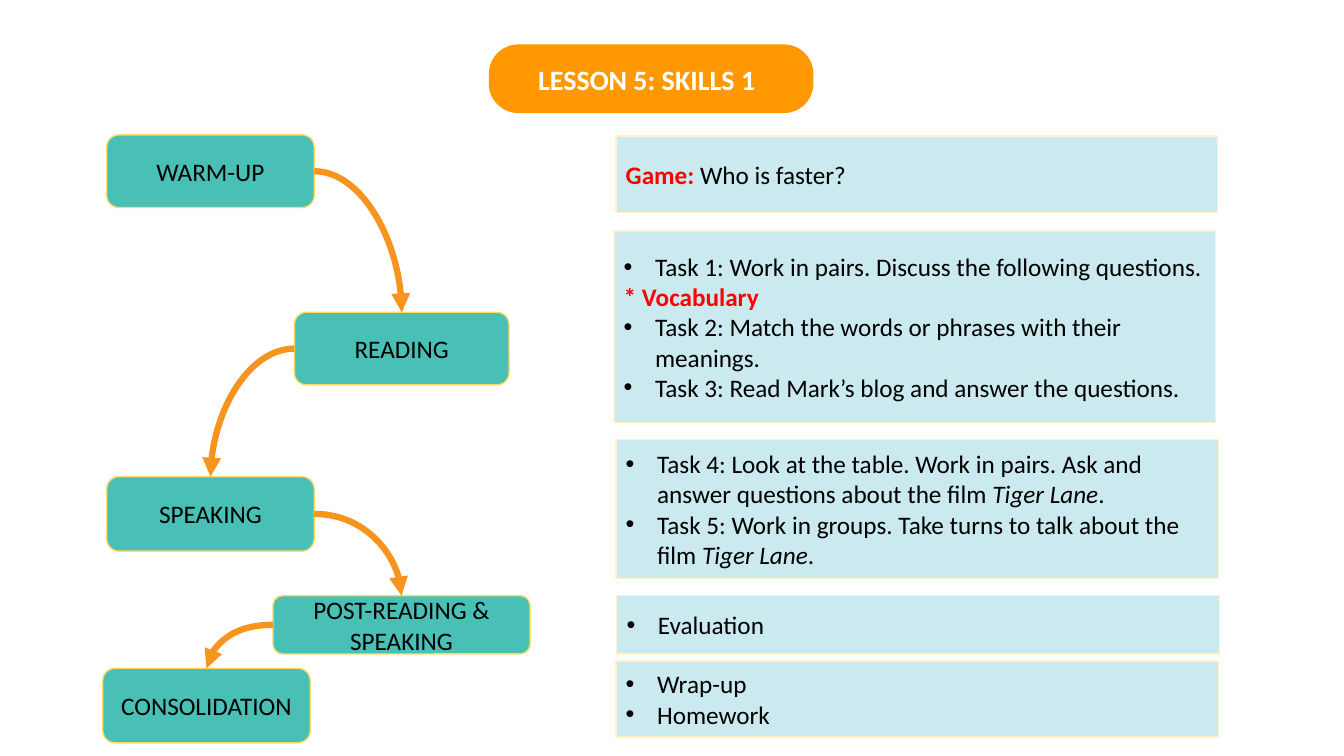
"""Build the lesson overview slide: a chain of stages beside their tasks."""
from lxml import etree
from pptx import Presentation
from pptx import util as u
from pptx.dml.color import RGBColor
from pptx.enum import shapes, text
from pptx.oxml import ns


def paint(color_format, color):
    color_format.rgb = RGBColor.from_string(color)


def add_box(kind, place, fill, line=None):
    shape = slide.shapes.add_shape(kind, *[u.Cm(length) for length in place])
    shape.shadow.inherit = False
    shape.fill.solid()
    paint(shape.fill.fore_color, fill)
    if line:
        paint(shape.line.color, line)
        shape.line.width = u.Pt(1)
    else:
        shape.line.fill.background()
    shape.text_frame.word_wrap = True
    shape.text_frame.vertical_anchor = text.MSO_ANCHOR.MIDDLE
    return shape


presentation = Presentation()
presentation.slide_width = u.Cm(33.87)
presentation.slide_height = u.Cm(19.05)
slide = presentation.slides.add_slide(presentation.slide_layouts[6])

ROUNDED = shapes.MSO_SHAPE.ROUNDED_RECTANGLE
FONT = "Calibri"
FILM = "Tiger Lane"
TOP, LEFT, RIGHT = 0, 1, 3

title_pill = add_box(ROUNDED, (12.32, 1.12, 8.18, 1.73), "FF9801")
title_pill.adjustments[0] = 0.43
title = slide.shapes.add_textbox(u.Cm(13.31), u.Cm(1.45), u.Cm(6.38), u.Cm(1.12))
title.text_frame.word_wrap = True
run = title.text_frame.paragraphs[0].add_run()
run.text = "LESSON 5: SKILLS 1"
run.font.name = FONT
run.font.size = u.Pt(20)
run.font.bold = True
paint(run.font.color, "FFFFFF")

stages = [
    ("WARM-UP", (2.69, 3.4, 5.23, 1.83)),
    ("READING", (7.42, 7.87, 5.41, 1.83)),
    ("SPEAKING", (2.69, 12.01, 5.23, 1.88)),
    ("POST-READING & SPEAKING", (6.88, 15.01, 6.48, 1.47)),
    ("CONSOLIDATION", (2.59, 16.84, 5.23, 1.88)),
]
stage_boxes = []
for name, place in stages:
    box = add_box(ROUNDED, place, "48C0B6", "FFD966")
    paragraph = box.text_frame.paragraphs[0]
    paragraph.alignment = text.PP_ALIGN.CENTER
    run = paragraph.add_run()
    run.text = name
    run.font.name = FONT
    run.font.size = u.Pt(18)
    paint(run.font.color, "000000")
    stage_boxes.append(box)

for index, (start, end) in enumerate(zip(stage_boxes, stage_boxes[1:])):
    arrow = slide.shapes.add_connector(shapes.MSO_CONNECTOR.CURVE, 0, 0, 0, 0)
    arrow.begin_connect(start, LEFT if index % 2 else RIGHT)
    arrow.end_connect(end, TOP)
    paint(arrow.line.color, "F7941E")
    arrow.line.width = u.Pt(4.5)
    properties = arrow._element.spPr
    properties.find(ns.qn("a:prstGeom")).set("prst", "curvedConnector2")
    etree.SubElement(properties.find(ns.qn("a:ln")), ns.qn("a:tailEnd"), type="triangle")
    etree.SubElement(properties, ns.qn("a:effectLst"))

tasks = [
    ((15.52, 3.43, 15.16, 1.93), [
        (False, [("Game: ", "key"), ("Who is faster?", "plain")]),
    ]),
    ((15.47, 5.82, 15.16, 4.83), [
        (True, [("Task 1: Work in pairs. Discuss the following questions.", "plain")]),
        (False, [("* Vocabulary", "key")]),
        (True, [("Task 2: Match the words or phrases with their meanings.", "plain")]),
        (True, [("Task 3: Read Mark’s blog and answer the questions.", "plain")]),
    ]),
    ((15.52, 11.07, 15.19, 3.51), [
        (True, [("Task 4: Look at the table. Work in pairs. Ask and answer "
                 "questions about the film ", "plain"),
                (FILM, "film"), (".", "plain")]),
        (True, [("Task 5: Work in groups. Take turns to talk about the film ", "plain"),
                (FILM, "film"), (".", "plain")]),
    ]),
    ((15.54, 15.01, 15.19, 1.47), [(True, [("Evaluation", "plain")])]),
    ((15.52, 16.66, 15.19, 1.91), [
        (True, [("Wrap-up", "plain")]),
        (True, [("Homework", "plain")]),
    ]),
]
for place, lines in tasks:
    frame = add_box(shapes.MSO_SHAPE.RECTANGLE, place, "CBEAF0", "FFF2CC").text_frame
    for index, (bulleted, runs) in enumerate(lines):
        paragraph = frame.add_paragraph() if index else frame.paragraphs[0]
        paragraph.alignment = text.PP_ALIGN.LEFT
        if bulleted:
            properties = paragraph._p.get_or_add_pPr()
            properties.set("marL", str(u.Cm(0.79)))
            properties.set("indent", str(-u.Cm(0.79)))
            etree.SubElement(properties, ns.qn("a:buFont"), typeface="Arial")
            etree.SubElement(properties, ns.qn("a:buChar"), char="•")
        for words, style in runs:
            run = paragraph.add_run()
            run.text = words
            run.font.name = FONT
            run.font.size = u.Pt(18)
            run.font.bold = style == "key"
            run.font.italic = style == "film"
            paint(run.font.color, "FF0000" if style == "key" else "000000")

presentation.save("out.pptx")
